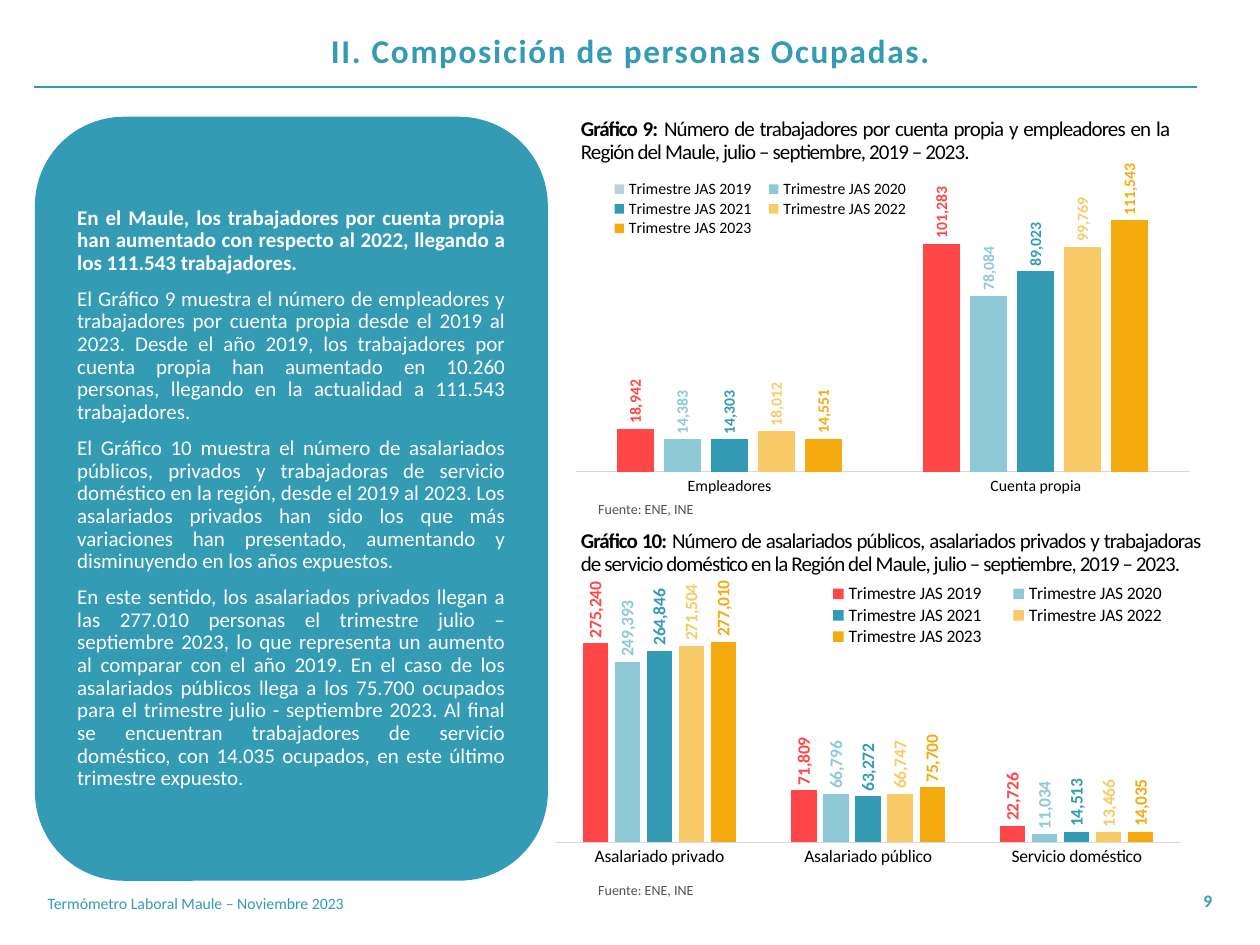
from dataclasses import dataclass

from lxml import etree
from pptx import Presentation
from pptx.chart.data import CategoryChartData
from pptx.dml.color import RGBColor
from pptx.enum.chart import XL_CHART_TYPE as Kind, XL_LABEL_POSITION as Spot
from pptx.enum.chart import XL_LEGEND_POSITION as Side, XL_TICK_MARK as Tick
from pptx.enum.shapes import MSO_CONNECTOR as Link
from pptx.enum.text import MSO_ANCHOR as Anchor, MSO_AUTO_SIZE as Fit, PP_ALIGN as Align
from pptx.oxml import parse_xml
from pptx.oxml.ns import qn
from pptx.util import Cm, Pt

TEAL, BLACK, WHITE, GRAY = "339CB4", "000000", "FFFFFF", "525252"
RED = "FF4747"
HUES = [RED, "8FC9D6", TEAL, "F9CA68", "F5AB0F"]
YEARS = range(2019, 2024)
CHART_NS = "http://schemas.openxmlformats.org/drawingml/2006/chart"
Box = tuple[float, float, float, float]
Run = tuple[str, bool]


@dataclass
class Panel:
    """A column chart with its caption and source note; boxes are in cm,
    plot and legend are fractions of the chart."""
    label: str
    text: str
    head: Box
    box: Box
    note: Box
    cats: list[str]
    rows: list[list[int]]
    top: int
    size: int
    plot: Box
    legend: Box
    key: str = RED


PANELS = [
    Panel("Gráfico 9:",
          " Número de trabajadores por cuenta propia y empleadores en la Región "
          "del Maule, julio – septiembre, 2019 – 2023.",
          (11.46, 2.26, 12.37, 1.32), (11.1, 3, 13, 7.57), (11.81, 9.96, 4.09, 0.61),
          ["Empleadores", "Cuenta propia"],
          [[18942, 101283], [14383, 78084], [14303, 89023], [18012, 99769],
           [14551, 111543]],
          120000, 9, (0.04, 0.14, 0.95, 0.72), (0.08, 0.08, 0.49, 0.16), "B8D1DB"),
    Panel("Gráfico 10:",
          " Número de asalariados públicos, asalariados privados y trabajadoras de "
          "servicio doméstico en la Región del Maule, julio – septiembre, 2019 – 2023.",
          (11.46, 10.57, 13, 1.17), (10.64, 11.61, 13.72, 6.63), (11.81, 17.65, 4.09, 0.61),
          ["Asalariado privado", "Asalariado público", "Servicio doméstico"],
          [[275240, 71809, 22726], [249393, 66796, 11034], [264846, 63272, 14513],
           [271504, 66747, 13466], [277010, 75700, 14035]],
          300000, 10, (0.04, 0.15, 0.92, 0.66), (0.41, 0.02, 0.56, 0.2)),
]

BODY = [
    "En el Maule, los trabajadores por cuenta propia han aumentado con respecto al "
    "2022, llegando a los 111.543 trabajadores.",
    "El Gráfico 9 muestra el número de empleadores y trabajadores por cuenta propia "
    "desde el 2019 al 2023. Desde el año 2019, los trabajadores por cuenta propia han "
    "aumentado en 10.260 personas, llegando en la actualidad a 111.543 trabajadores.",
    "El Gráfico 10 muestra el número de asalariados públicos, privados y trabajadoras "
    "de servicio doméstico en la región, desde el 2019 al 2023. Los asalariados "
    "privados han sido los que más variaciones han presentado, aumentando y "
    "disminuyendo en los años expuestos.",
    "En este sentido, los asalariados privados llegan a las 277.010 personas el "
    "trimestre julio – septiembre 2023, lo que representa un aumento al comparar con "
    "el año 2019. En el caso de los asalariados públicos llega a los 75.700 ocupados "
    "para el trimestre julio - septiembre 2023. Al final se encuentran trabajadores "
    "de servicio doméstico, con 14.035 ocupados, en este último trimestre expuesto.",
]


def paint(color, hue: str) -> None:
    color.rgb = RGBColor.from_string(hue)


def style(font, size: float, hue: str, bold: bool = False) -> None:
    font.name, font.size, font.bold = "Calibri", Pt(size), bold
    paint(font.color, hue)


def move(shape, box: Box) -> None:
    shape.left, shape.top, shape.width, shape.height = map(Cm, box)


def write(shape, paras: list[list[Run]], *, size: float, hue: str, align=Align.LEFT,
          anchor=Anchor.TOP, lead: float = 1, gap: float = 0, track: float = 0) -> None:
    """Fill a shape with paragraphs of (text, bold) runs; track is in points."""
    frame = shape.text_frame
    frame.word_wrap, frame.auto_size = True, Fit.NONE
    frame.vertical_anchor = anchor
    for i, runs in enumerate(paras):
        para = frame.add_paragraph() if i else frame.paragraphs[0]
        props = para._p.get_or_add_pPr()
        props.set("marL", "0")
        props.set("indent", "0")
        etree.SubElement(props, qn("a:buNone"))
        para.alignment, para.line_spacing = align, lead
        para.space_before = Pt(gap if i else 0)
        for text, bold in runs:
            run = para.add_run()
            run.text = text
            style(run.font, size, hue, bold)
            if track:
                run._r.get_or_add_rPr().set("spc", str(int(track * 100)))


def label(slide, box: Box, runs: list[Run], **form) -> None:
    write(slide.shapes.add_textbox(*map(Cm, box)), [runs], **form)


def place(parent, index: int, box: Box, inner: str = "") -> None:
    """Give a chart part a fixed layout."""
    for old in parent.findall(qn("c:layout")):
        parent.remove(old)
    modes = "".join(f'<c:{a}Mode val="edge"/>' for a in "xy")
    sides = "".join(f'<c:{a} val="{v}"/>' for a, v in zip("xywh", box))
    parent.insert(index, parse_xml(
        f'<c:layout xmlns:c="{CHART_NS}"><c:manualLayout>{inner}{modes}{sides}'
        '</c:manualLayout></c:layout>'))


def draw(slide, panel: Panel) -> None:
    label(slide, panel.head, [(panel.label, True), (panel.text, False)], size=12,
          hue=BLACK, align=Align.JUSTIFY, lead=0.9, track=-0.5)
    label(slide, panel.note, [("Fuente: ENE, INE", False)], size=8, hue=GRAY)

    data = CategoryChartData(number_format="#,##0")
    data.categories = panel.cats
    for year, row in zip(YEARS, panel.rows):
        data.add_series(f"Trimestre JAS {year}", row)
    chart = slide.shapes.add_chart(Kind.COLUMN_CLUSTERED, *map(Cm, panel.box), data).chart
    chart.has_title = False
    style(chart.font, 10, BLACK)

    axis = chart.category_axis
    axis.major_tick_mark = axis.minor_tick_mark = Tick.NONE
    axis.format.line.width = Pt(0.5)
    paint(axis.format.line.color, "D9D9D9")
    style(axis.tick_labels.font, panel.size, BLACK)
    scale = chart.value_axis
    scale.minimum_scale, scale.maximum_scale = 0, panel.top
    scale.has_major_gridlines = scale.visible = False

    chart.has_legend = True
    legend = chart.legend
    legend.position, legend.include_in_layout = Side.BOTTOM, False
    style(legend.font, panel.size, BLACK)
    place(legend._element, 1, panel.legend)
    area = chart._chartSpace.chart.plotArea
    place(area, 0, panel.plot, '<c:layoutTarget val="inner"/>')

    plot = chart.plots[0]
    plot.vary_by_categories, plot.gap_width, plot.overlap = False, 219, -27
    for series, hue, key in zip(plot.series, HUES, [panel.key] + HUES[1:]):
        series.format.fill.solid()
        paint(series.format.fill.fore_color, key)
        if key != hue:
            for i in range(len(panel.cats)):
                fill = series.points[i].format.fill
                fill.solid()
                paint(fill.fore_color, hue)
        tags = series.data_labels
        tags.show_value, tags.position = True, Spot.OUTSIDE_END
        tags.number_format, tags.number_format_is_linked = "#,##0", False
        style(tags.font, panel.size, hue, True)
        turn = tags._element.find(".//" + qn("a:bodyPr"))
        turn.set("rot", "-5400000")
        turn.set("vert", "horz")


def main() -> None:
    deck = Presentation()
    deck.slide_width, deck.slide_height = Cm(25.4), Cm(19.05)
    slide = deck.slides.add_slide(deck.slide_layouts[1])

    rule = slide.shapes.add_connector(Link.STRAIGHT, *map(Cm, (0.69, 1.75, 24.13, 1.75)))
    rule.line.width = Pt(1)
    paint(rule.line.color, TEAL)
    etree.SubElement(rule._element.spPr, qn("a:effectLst"))

    title, body = slide.shapes.title, slide.placeholders[1]
    move(title, (4.22, 0.58, 16.99, 2.08))
    write(title, [[("II. Composición de personas Ocupadas.", True)]], size=19, hue=TEAL,
          align=Align.CENTER, lead=0.9, track=1)
    move(body, (0.81, 2.46, 10.13, 15.19))
    shape = etree.SubElement(body._element.spPr, qn("a:prstGeom"), prst="roundRect")
    etree.SubElement(shape, qn("a:avLst"))
    body.fill.solid()
    paint(body.fill.fore_color, TEAL)
    body.line.width = Pt(6)
    paint(body.line.color, TEAL)
    write(body, [[(text, i == 0)] for i, text in enumerate(BODY)], size=12, hue=WHITE,
          align=Align.JUSTIFY, anchor=Anchor.MIDDLE, lead=0.9, gap=7.5)

    for panel in PANELS:
        draw(slide, panel)
    label(slide, (0.71, 17.7, 8.59, 1.02), [("Termómetro Laboral Maule – Noviembre 2023", False)],
          size=9, hue=TEAL, anchor=Anchor.MIDDLE)
    label(slide, (18.97, 17.65, 5.72, 1.02), [("9", True)], size=10, hue=TEAL,
          align=Align.RIGHT, anchor=Anchor.MIDDLE)
    deck.save("out.pptx")


if __name__ == "__main__":
    main()
